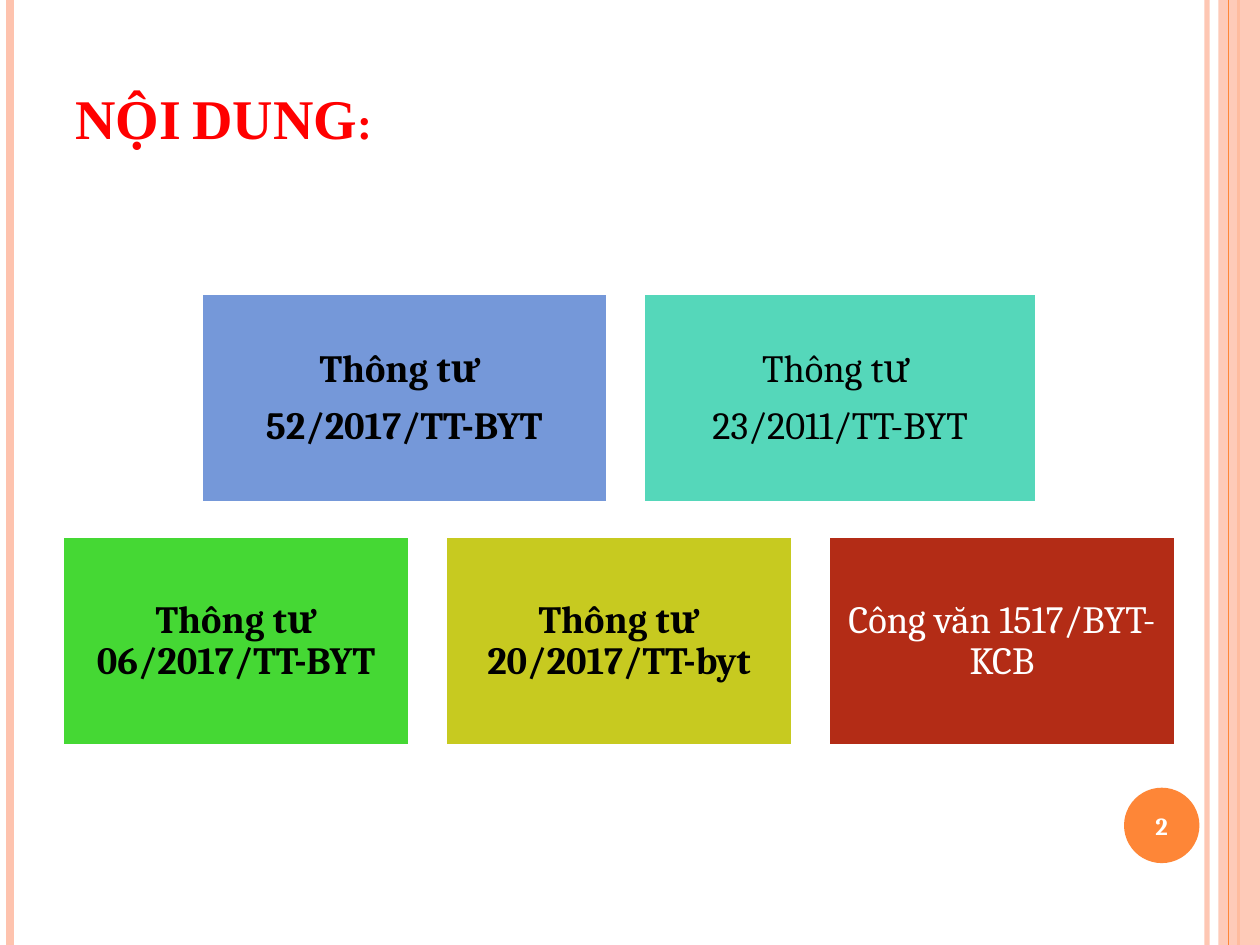
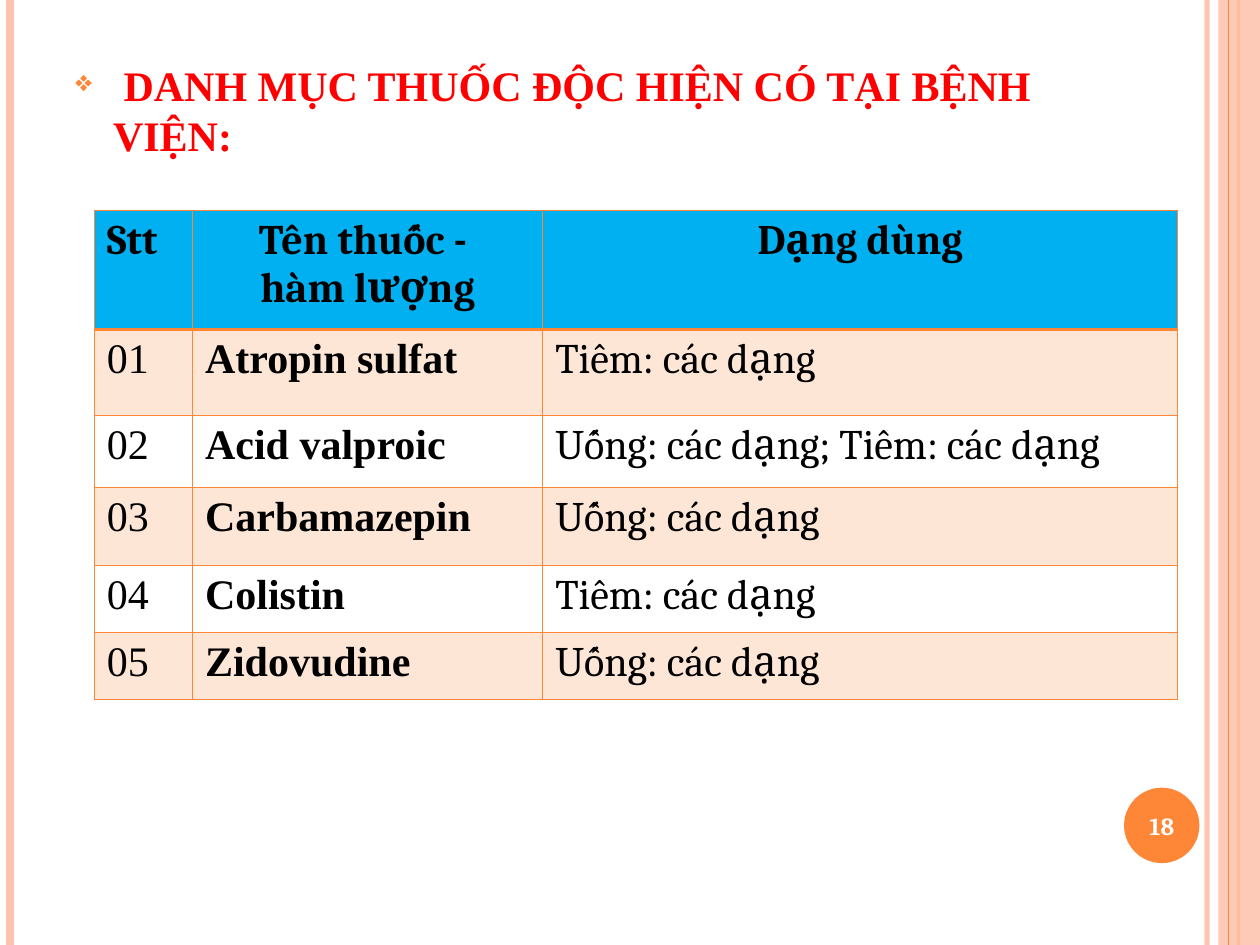
"""Build two slides on circulars and listed toxic drugs."""
from lxml.etree import SubElement
from pptx import Presentation
from pptx.dml.color import RGBColor
from pptx.enum.shapes import MSO_CONNECTOR as Link, MSO_SHAPE as Shape
from pptx.enum.text import MSO_ANCHOR as Anchor, PP_ALIGN as Align
from pptx.oxml.ns import qn
from pptx.util import Cm, Pt

WIDE, HIGH = 25.4, 19.05
PEACH, ORANGE, RED = "FEC3AE", "FE8637", "FF0000"
WHITE, BLACK, BLUE = "FFFFFF", "000000", "00B0F0"
SERIF, ROMAN = "Cambria", "Times New Roman"
MID, GAP = 12.48, 0.71

HEAD = dict(name=ROMAN, size=Pt(32), bold=True)
TOPIC = dict(name=ROMAN, size=Pt(24), bold=True)
BADGE = dict(name=SERIF, size=Pt(14), bold=True)
TITLE = dict(name=SERIF, size=Pt(24), bold=True)
PLAIN = dict(name=SERIF, size=Pt(24), bold=False)
COUNT = dict(name=ROMAN, size=Pt(24), bold=False)

TILES = [
    (5.92, 4.22, [
        (8.2, "7598D9", BLACK, True, ["Thông tư ", "52/2017/TT-BYT"]),
        (7.95, "55D7BA", BLACK, False, ["Thông tư ", "23/2011/TT-BYT"])]),
    (10.82, 4.22, [
        (7.01, "45D834", BLACK, True, ["Thông tư 06/2017/TT-BYT"]),
        (7.01, "C7CA20", BLACK, True, ["Thông tư 20/2017/TT-byt"]),
        (7.01, "B32C16", WHITE, False, ["Công văn 1517/BYT-KCB"])]),
]
LABELS = [["Stt"], ["Tên thuốc - ", "hàm lượng"], ["Dạng dùng"]]
DRUGS = [
    ("Atropin sulfat", "Tiêm: các dạng"),
    ("Acid valproic", "Uống: các dạng; Tiêm: các dạng"),
    ("Carbamazepin", "Uống: các dạng"),
    ("Colistin", "Tiêm: các dạng"),
    ("Zidovudine", "Uống: các dạng"),
]
COLS = [1.98, 7.06, 12.8]
ROWS = [2.41, 1.73, 1.45, 1.57, 1.35, 1.35]


def tint(hue):
    """Turn a hex string into a colour."""
    return RGBColor.from_string(hue)


def fade(node, share):
    """Make the colours below a node partly clear."""
    for hue in node.iter(qn("a:srgbClr")):
        SubElement(hue, qn("a:alpha"), val=str(share * 1000))


def assign(item, values):
    """Set each named value on an item."""
    for key, value in values.items():
        setattr(item, key, value)


def write(frame, lines, style, hue, **layout):
    """Fill a text frame with one paragraph per line."""
    frame.word_wrap = True
    for spot, line in enumerate(lines):
        para = frame.add_paragraph() if spot else frame.paragraphs[0]
        assign(para, layout)
        run = para.add_run()
        run.text = line
        assign(run.font, style)
        run.font.color.rgb = tint(hue)


def inset(frame, size):
    """Give a frame equal margins and middle text."""
    sides = ("left", "top", "right", "bottom")
    assign(frame, {f"margin_{side}": Cm(size) for side in sides})
    frame.vertical_anchor = Anchor.MIDDLE


def rule(slide, left, width, hue, share=100):
    """Draw a full-height line."""
    line = slide.shapes.add_connector(
        Link.STRAIGHT, Cm(left), Cm(0), Cm(left), Cm(HIGH))
    line.line.width = Pt(width)
    line.line.color.rgb = tint(hue)
    props = line._element.spPr
    if share < 100:
        fade(props, share)
    SubElement(props, qn("a:effectLst"))


def block(slide, kind, place, hue):
    """Add a filled shape with no line or shadow."""
    shape = slide.shapes.add_shape(kind, *map(Cm, place))
    shape.shadow.inherit = False
    shape.fill.solid()
    shape.fill.fore_color.rgb = tint(hue)
    shape.line.fill.background()
    return shape


def note(slide, place, text, style, hue, **layout):
    """Add a wrapping text box and return its frame."""
    frame = slide.shapes.add_textbox(*map(Cm, place)).text_frame
    write(frame, [text], style, hue, **layout)
    return frame


def start(deck, number):
    """Add a slide with the side bands and page badge."""
    slide = deck.slides.add_slide(deck.slide_layouts[6])
    rule(slide, 24.33, 3, PEACH, 93)
    rule(slide, 0.2, 4.5, PEACH)
    rule(slide, 24.97, 1.5, ORANGE)
    band = block(slide, Shape.RECTANGLE, (24.56, 0, 0.84, HIGH), PEACH)
    fade(band._element.spPr, 87)
    rule(slide, 24.77, 0.75, ORANGE)
    badge = block(slide, Shape.OVAL, (22.66, 15.88, 1.52, 1.52), ORANGE)
    inset(badge.text_frame, 0)
    write(badge.text_frame, [number], BADGE, WHITE, alignment=Align.CENTER)
    return slide


def tile(slide, place, fill, hue, bold, lines):
    """Add a coloured box with centred text."""
    shape = block(slide, Shape.RECTANGLE, place, fill)
    shape.line.color.rgb = tint(WHITE)
    shape.line.width = Pt(2)
    inset(shape.text_frame, 0.23)
    style = dict(name=SERIF, size=Pt(22), bold=bold)
    write(shape.text_frame, lines, style, hue, alignment=Align.CENTER,
          line_spacing=0.9, space_after=Pt(8.6))


def bullet(para):
    """Give a paragraph a hanging diamond bullet."""
    props = para._p.get_or_add_pPr()
    props.set("marL", str(Cm(0.76)))
    props.set("indent", str(-Cm(0.76)))
    mark = SubElement(props, qn("a:buClr"))
    SubElement(mark, qn("a:srgbClr"), val=ORANGE)
    SubElement(props, qn("a:buSzPct"), val="70000")
    SubElement(props, qn("a:buChar"), char="❖")


def edge(cell, base):
    """Draw the four cell borders."""
    props = cell._tc.get_or_add_tcPr()
    for spot, side in enumerate("LRTB"):
        width = base if side == "B" else 1
        line = SubElement(props, qn(f"a:ln{side}"), w=str(Pt(width)))
        fill = SubElement(line, qn("a:solidFill"))
        SubElement(fill, qn("a:srgbClr"), val=ORANGE)
        props.insert(spot, line)


def fill_cell(cell, lines, style, fill, share=100, base=1, **layout):
    """Fill, write and border one table cell."""
    cell.fill.solid()
    cell.fill.fore_color.rgb = tint(fill)
    if share < 100:
        fade(cell._tc.tcPr, share)
    edge(cell, base)
    write(cell.text_frame, lines, style, BLACK, **layout)


def add_grid(slide):
    """Add the table of drugs and their forms."""
    place = map(Cm, (1.9, 4.24, sum(COLS), sum(ROWS)))
    table = slide.shapes.add_table(len(ROWS), len(COLS), *place).table
    table.first_row = table.horz_banding = False
    for col, width in zip(table.columns, COLS):
        col.width = Cm(width)
    for row, height in zip(table.rows, ROWS):
        row.height = Cm(height)
    for col, lines in enumerate(LABELS):
        align = Align.CENTER if col else Align.LEFT
        fill_cell(table.cell(0, col), lines, TITLE, BLUE, base=2,
                  alignment=align)
    for row, drug in enumerate(DRUGS, 1):
        fill, share = (ORANGE, 20) if row % 2 else (WHITE, 100)
        texts = (f"{row:02}", *drug)
        for col, style in enumerate((COUNT, TOPIC, PLAIN)):
            fill_cell(table.cell(row, col), [texts[col]], style, fill, share)


def topics(deck):
    """Build the slide of contents."""
    slide = start(deck, "2")
    frame = note(slide, (1.27, 0.76, 20.75, 2.41), "NỘI DUNG:", HEAD, RED)
    frame.vertical_anchor = Anchor.BOTTOM
    run = frame.paragraphs[0].runs[0]
    run._r.get_or_add_rPr().set("cap", "small")
    for top, height, tiles in TILES:
        total = sum(item[0] for item in tiles) + GAP * (len(tiles) - 1)
        left = MID - total / 2
        for width, *rest in tiles:
            tile(slide, (left, top, width, height), *rest)
            left += width + GAP


def drugs(deck):
    """Build the slide of toxic drugs."""
    slide = start(deck, "18")
    frame = note(slide, (1.27, 1.07, 21.79, 2.6),
                 " DANH MỤC THUỐC ĐỘC HIỆN CÓ TẠI BỆNH VIỆN:",
                 TOPIC, RED, space_before=Pt(6))
    bullet(frame.paragraphs[0])
    add_grid(slide)


def main():
    """Build and save the deck."""
    deck = Presentation()
    deck.slide_width, deck.slide_height = Cm(WIDE), Cm(HIGH)
    topics(deck)
    drugs(deck)
    deck.save("out.pptx")


if __name__ == "__main__":
    main()
